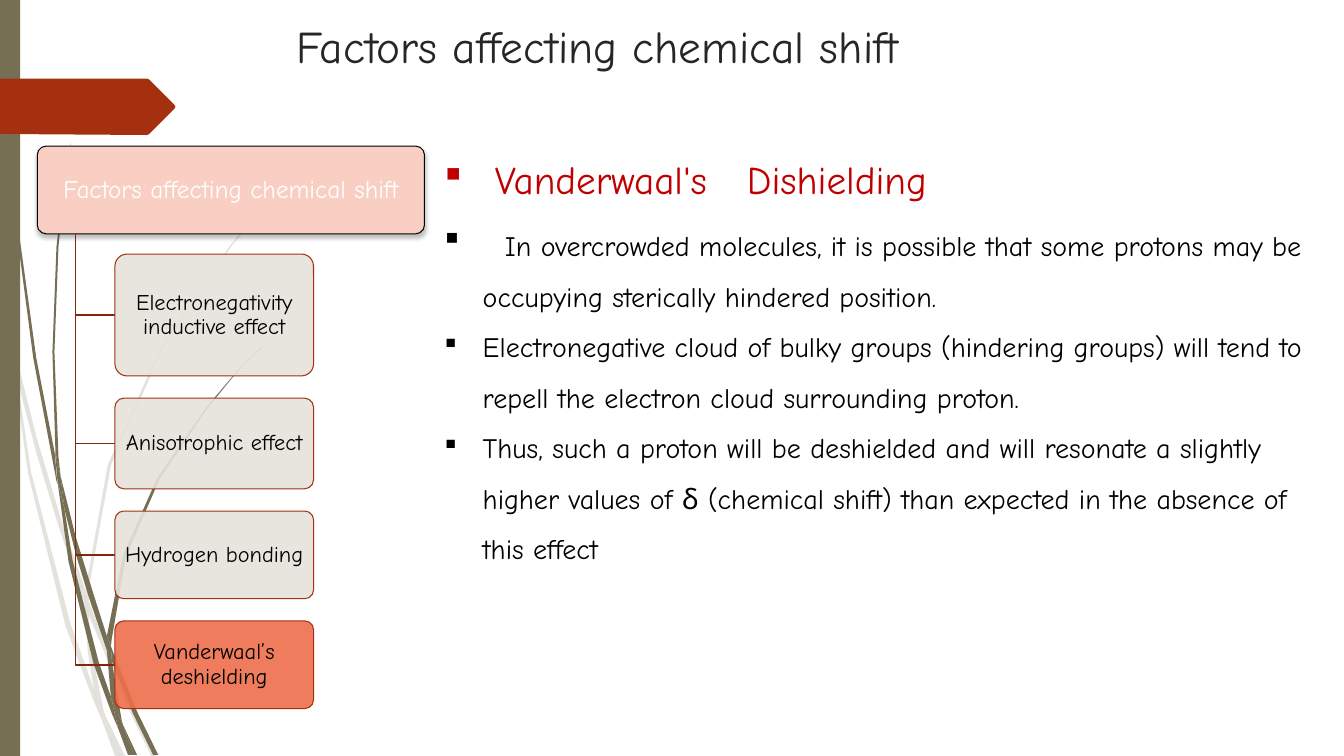
from dataclasses import dataclass

import pptx
import pptx.dml.color
import pptx.enum.shapes
import pptx.enum.text
import pptx.oxml
import pptx.oxml.ns
import pptx.util
from pptx.util import Inches

NS = pptx.oxml.ns.nsdecls("a")

PALE_WISPS = [
    [(0.58, 5.22), (0.84, 5.99), (0.85, 5.86), (0.62, 5.2), (0.36, 4.33),
     (0.14, 3.45), (0.17, 3.76), (0.36, 4.49)],
    [(0.92, 6.07), (0.88, 5.96), (0.88, 6.1), (1.23, 6.94), (1.5, 7.5),
     (1.55, 7.5), (1.27, 6.92)],
    [(1.19, 7.5), (1.24, 7.5), (1.05, 7.11)],
    [(0.93, 6.83), (0.7, 6.19), (0.31, 4.69), (0.17, 3.76), (0.11, 3.5),
     (0.28, 4.7), (0.65, 6.21), (0.92, 6.93), (1.01, 7.14), (0.99, 7.07)],
    [(0.84, 5.99), (0.87, 6.46), (0.93, 6.83), (0.96, 6.92), (1.05, 7.11),
     (1.03, 7.06), (0.91, 6.46), (0.88, 6.1), (0.88, 6.08)],
    [(0.88, 5.84), (1.1, 4.62), (1.6, 3.49), (2.29, 2.45), (2.68, 1.98),
     (2.9, 1.75), (3.12, 1.54), (3.12, 1.53), (2.89, 1.75), (2.68, 1.97),
     (2.28, 2.44), (1.58, 3.48), (1.07, 4.61), (0.85, 5.84), (0.88, 5.96)],
    [(1.01, 7.14), (1.14, 7.5), (1.19, 7.5)],
    [(0.88, 6.08), (0.88, 5.96), (0.85, 5.86), (0.84, 5.99)],
    [(0.96, 6.92), (0.93, 6.83), (0.99, 7.07), (1.01, 7.14), (1.19, 7.5),
     (1.05, 7.11)],
]
DARK_WISPS = [
    [(0.07, 1.1), (0.17, 2.33), (0.33, 3.55), (0.56, 4.77), (0.57, 4.81),
     (0.55, 4.57), (0.55, 4.53), (0.36, 3.55), (0.19, 2.32), (0.08, 1.09),
     (0.05, 0.48), (0.04, 0), (0.03, 0), (0.04, 0.48)],
    [(0.88, 5.92), (1.06, 6.45), (1.06, 6.31), (0.93, 5.9), (0.75, 5.32),
     (0.6, 4.72), (0.64, 5.05), (0.75, 5.49)],
    [(1.13, 6.49), (1.1, 6.41), (1.11, 6.56), (1.32, 7.08), (1.52, 7.49),
     (1.57, 7.49), (1.36, 7.06)],
    [(1.1, 6.91), (0.98, 6.57), (0.72, 5.56), (0.64, 5.05), (0.57, 4.77),
     (0.68, 5.57), (0.93, 6.59), (1.11, 7.08), (1.17, 7.22), (1.16, 7.17)],
    [(0.6, 4.72), (0.58, 4.53), (0.54, 3.49), (0.58, 2.45), (0.63, 1.93),
     (0.7, 1.41), (0.62, 1.93), (0.56, 2.45), (0.52, 3.49), (0.55, 4.49)],
    [(1.33, 7.49), (1.36, 7.49), (1.22, 7.19)],
    [(0.57, 4.77), (0.64, 5.05), (0.6, 4.72), (0.55, 4.49), (0.55, 4.53)],
    [(1.11, 6.33), (1.25, 5.52), (1.58, 4.76), (2.05, 4.06), (2.31, 3.74),
     (2.45, 3.59), (2.61, 3.44), (2.6, 3.44), (2.45, 3.58), (2.31, 3.73),
     (2.04, 4.05), (1.56, 4.74), (1.22, 5.51), (1.06, 6.31), (1.1, 6.41)],
    [(1.17, 7.22), (1.27, 7.49), (1.31, 7.49)],
    [(1.06, 6.45), (1.1, 6.91), (1.16, 7.06), (1.22, 7.19), (1.21, 7.16),
     (1.11, 6.56), (1.09, 6.51)],
    [(1.06, 6.45), (1.11, 6.56), (1.1, 6.41), (1.06, 6.31)],
    [(1.16, 7.06), (1.1, 6.91), (1.16, 7.17), (1.17, 7.22), (1.3, 7.49),
     (1.33, 7.49), (1.22, 7.19)],
]
RIBBON = [(0, 0.78), (1.46, 0.78), (1.48, 0.79), (1.73, 1.04), (1.74, 1.06),
          (1.73, 1.08), (1.48, 1.33), (1.46, 1.34), (0, 1.33)]

FACTORS = [
    ("Electronegativity inductive effect", 2.52, 1.21, "factor"),
    ("Anisotrophic effect", 3.95, 0.9, "factor"),
    ("Hydrogen bonding", 5.07, 0.87, "factor"),
    ("Vanderwaal’s deshielding", 6.16, 0.87, "current"),
]
EXPLANATION = [
    "In overcrowded molecules, it is possible that some protons may be "
    "occupying sterically hindered position.",
    "Electronegative cloud of bulky groups (hindering groups) will tend to "
    "repell the electron cloud surrounding proton.",
    "Thus, such a proton will be deshielded and will resonate a slightly "
    "higher values of δ (chemical shift) than expected in the absence of "
    "this effect",
]


@dataclass(frozen=True)
class Theme:
    font: str = "Comic Neue"
    olive: str = "766F54"
    rust: str = "A53010"
    branch: str = "84260D"
    root: str = "F9CFC3"
    factor: str = "E5E3DB"
    current: str = "EE6E4B"
    title: str = "262626"
    heading: str = "C00000"
    black: str = "000000"
    white: str = "FFFFFF"
    title_size: float = 32.4
    heading_size: float = 28
    lead_size: float = 24
    body_size: float = 20
    root_size: float = 18
    factor_size: float = 16


class SlideBuilder:
    def __init__(self, slide, theme):
        self.slide = slide
        self.theme = theme

    def paint(self, shape, fill=None, opacity=100, line=None, width=0.75):
        shape.shadow.inherit = False
        if fill:
            shape.fill.solid()
            shape.fill.fore_color.rgb = pptx.dml.color.RGBColor.from_string(fill)
            if opacity < 100:
                color = shape.fill._xPr.find(".//" + pptx.oxml.ns.qn("a:srgbClr"))
                color.append(pptx.oxml.parse_xml(f'<a:alpha {NS} val="{opacity * 1000}"/>'))
        else:
            shape.fill.background()
        if line:
            shape.line.color.rgb = pptx.dml.color.RGBColor.from_string(line)
            shape.line.width = pptx.util.Pt(width)
        else:
            shape.line.fill.background()

    def outline(self, points, close=True, **look):
        start, *rest = [(Inches(x), Inches(y)) for x, y in points]
        builder = self.slide.shapes.build_freeform(*start)
        builder.add_line_segments(rest, close=close)
        self.paint(builder.convert_to_shape(), **look)

    def style(self, run, size, color):
        run.font.name = self.theme.font
        run.font.size = pptx.util.Pt(size)
        run.font.color.rgb = pptx.dml.color.RGBColor.from_string(color)

    def bar(self, left, top, width, height, color):
        shape = self.slide.shapes.add_shape(
            pptx.enum.shapes.MSO_SHAPE.RECTANGLE,
            Inches(left), Inches(top), Inches(width), Inches(height))
        self.paint(shape, color)

    def card(self, text, box, size, color, **look):
        shape = self.slide.shapes.add_shape(
            pptx.enum.shapes.MSO_SHAPE.ROUNDED_RECTANGLE, *map(Inches, box))
        shape.adjustments[0] = 0.1
        self.paint(shape, **look)
        frame = shape.text_frame
        frame.text = text
        frame.word_wrap = True
        frame.vertical_anchor = pptx.enum.text.MSO_ANCHOR.MIDDLE
        frame.margin_left = frame.margin_right = Inches(0.06)
        frame.margin_top = frame.margin_bottom = Inches(0.05)
        paragraph = frame.paragraphs[0]
        paragraph.alignment = pptx.enum.text.PP_ALIGN.CENTER
        paragraph.line_spacing = 0.9
        self.style(paragraph.runs[0], size, color)
        return shape

    def drop_shadow(self, shape):
        effects = shape._element.spPr.find(pptx.oxml.ns.qn("a:effectLst"))
        effects.append(pptx.oxml.parse_xml(
            f'<a:outerShdw {NS} blurRad="38100" dist="25400" dir="5400000">'
            f'<a:srgbClr val="{self.theme.black}"><a:alpha val="25000"/></a:srgbClr>'
            '</a:outerShdw>'))

    def text_box(self, left, top, width, height):
        frame = self.slide.shapes.add_textbox(
            Inches(left), Inches(top), Inches(width), Inches(height)).text_frame
        frame.word_wrap = True
        return frame

    def bullet(self, paragraph, text, size, color, tabs=()):
        paragraph.text = text
        properties = paragraph._p.get_or_add_pPr()
        properties.set("marL", str(Inches(0.38)))
        properties.set("indent", str(Inches(-0.38)))
        properties.append(pptx.oxml.parse_xml(f'<a:buFont {NS} typeface="Wingdings" charset="2"/>'))
        properties.append(pptx.oxml.parse_xml(f'<a:buChar {NS} char="§"/>'))
        stops = "".join(f'<a:tab pos="{Inches(stop)}" algn="l"/>' for stop in tabs)
        if stops:
            properties.append(pptx.oxml.parse_xml(f"<a:tabLst {NS}>{stops}</a:tabLst>"))
        self.style(paragraph.runs[0], size, color)


def main():
    theme = Theme()
    deck = pptx.Presentation()
    deck.slide_width, deck.slide_height = Inches(13.33), Inches(7.5)
    page = SlideBuilder(deck.slides.add_slide(deck.slide_layouts[6]), theme)

    for wisps, opacity in ((PALE_WISPS, 20), (DARK_WISPS, 100)):
        for wisp in wisps:
            page.outline(wisp, fill=theme.olive, opacity=opacity)
    page.bar(0, 0, 0.2, 7.5, theme.olive)
    page.outline(RIBBON, fill=theme.rust)

    title = page.text_box(2.84, 0.13, 9.75, 0.66)
    title.text = "Factors affecting chemical shift"
    page.style(title.paragraphs[0].runs[0], theme.title_size, theme.title)

    root = page.card("Factors affecting chemical shift", (0.37, 1.45, 3.84, 0.87),
                     theme.root_size, theme.white, fill=theme.root, line=theme.black)
    page.drop_shadow(root)
    for factor, top, height, role in FACTORS:
        middle = top + height / 2
        page.outline([(0.75, 2.32), (0.75, middle), (1.14, middle)], close=False,
                     line=theme.branch, width=1.25)
        page.card(factor, (1.14, top, 1.97, height), theme.factor_size, theme.black,
                  fill=getattr(theme, role), opacity=90, line=theme.rust)

    body = page.text_box(4.31, 1.49, 8.9, 4.95)
    page.bullet(body.paragraphs[0], "\tVanderwaal's\tDishielding",
                theme.heading_size, theme.heading, tabs=(0.5, 3))
    for order, sentence in enumerate(EXPLANATION):
        point = body.add_paragraph()
        point.line_spacing = 1.5
        if order == 0:
            page.bullet(point, "\t", theme.lead_size, theme.black, tabs=(0.6,))
            lead = point.add_run()
            lead.text = sentence
            page.style(lead, theme.body_size, theme.black)
        else:
            page.bullet(point, sentence, theme.body_size, theme.black)

    deck.save("out.pptx")


if __name__ == "__main__":
    main()
